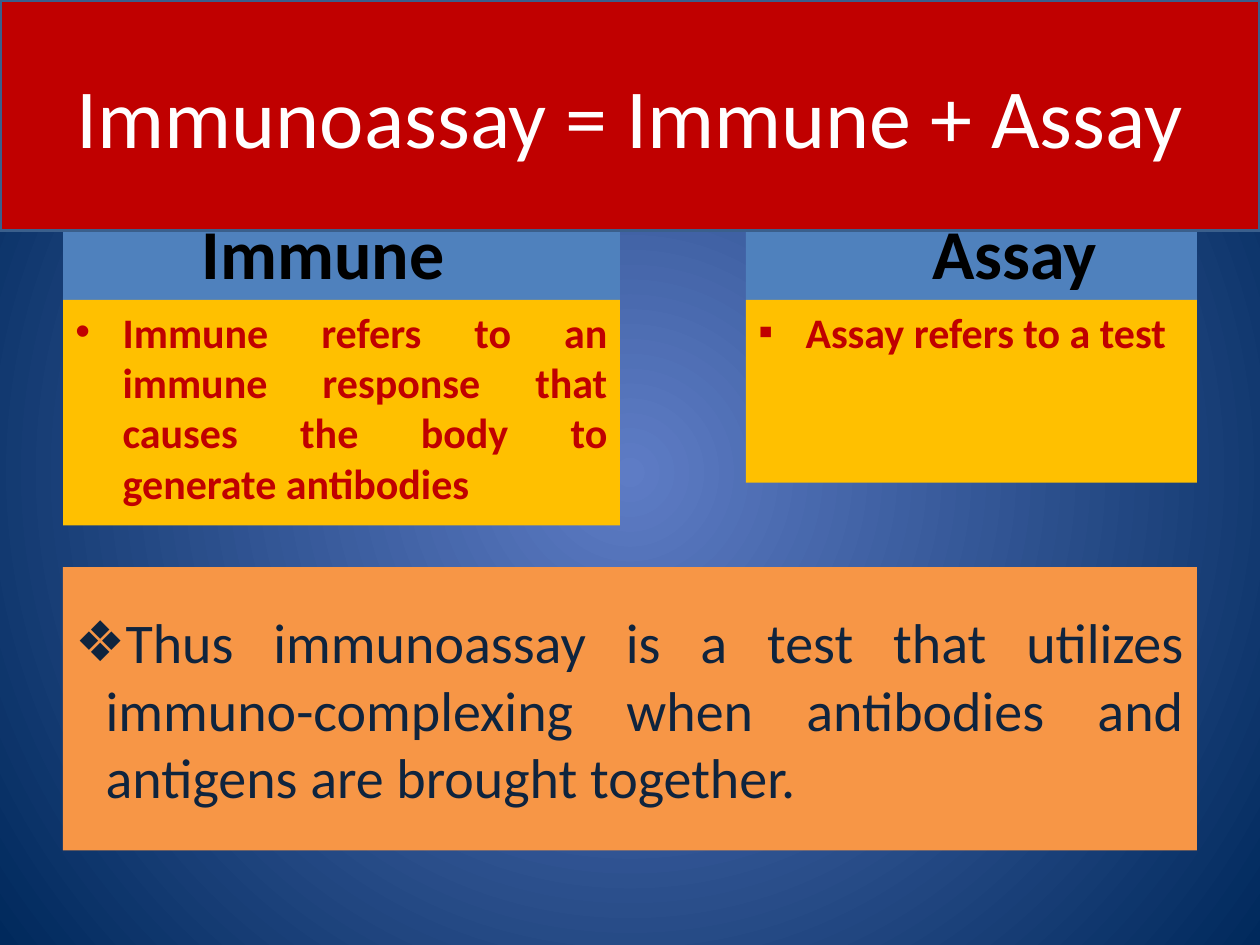
from lxml import etree
from pptx import Presentation
from pptx.dml.color import RGBColor as RGB
from pptx.enum.shapes import MSO_SHAPE as SHAPE
from pptx.enum.text import MSO_ANCHOR as ANCHOR, PP_ALIGN as ALIGN
from pptx.oxml.ns import qn
from pptx.util import Pt

COLORS = {
    "glow": "5E7CC5", "navy": "00295C", "red": "C00000", "edge": "3A5F8C",
    "blue": "4F81BD", "gold": "FFC000", "orange": "F79646",
    "ink": "0F243E", "black": "000000", "white": "FFFFFF",
}
FONT = "Calibri"
W, H = 720, 540
MARGIN = 36
HEAD_TOP, HEAD_H = 120.96, 50.4

TITLE = "Immunoassay = Immune + Assay"
SUMMARY = ("Thus immunoassay is a test that utilizes immuno-complexing "
           "when antibodies and antigens are brought together.")
COLUMNS = [
    dict(head="Immune", indent=72.3, left=MARGIN, width=318.24, height=128.88,
         text="Immune refers to an immune response that causes the body to generate antibodies",
         bullet="•", align=ALIGN.JUSTIFY),
    dict(head="Assay", indent=99.4, left=426.24, width=257.76, height=104.4,
         text="Assay refers to a test", bullet="▪", align=ALIGN.LEFT),
]


def rgb(name):
    return RGB.from_string(COLORS[name])


def add_box(s, text, at, *, fill, color, size, bold=False, align=ALIGN.LEFT,
            anchor=ANCHOR.MIDDLE, bullet=None, indent=0, line=None):
    sp = s.shapes.add_shape(SHAPE.RECTANGLE, *map(Pt, at))
    sp.shadow.inherit = False
    sp.fill.solid()
    sp.fill.fore_color.rgb = rgb(fill)
    if line:
        sp.line.color.rgb = rgb(line)
        sp.line.width = Pt(2)
    else:
        sp.line.fill.background()
    tf = sp.text_frame
    tf.word_wrap = True
    tf.vertical_anchor = anchor
    p = tf.paragraphs[0]
    p.alignment = align
    pPr = p._p.get_or_add_pPr()
    pPr.set("marL", str(Pt(indent)))
    if bullet:
        pPr.set("indent", str(-Pt(indent)))
        etree.SubElement(pPr, qn("a:buFont"), typeface="Arial")
        etree.SubElement(pPr, qn("a:buChar"), char=bullet)
    r = p.add_run()
    r.text = text
    r.font.name = FONT
    r.font.size = Pt(size)
    r.font.bold = bold
    r.font.color.rgb = rgb(color)


def set_background(s):
    fill = s.background.fill
    fill.gradient()
    for stop, name, pos in zip(fill.gradient_stops, ("glow", "navy"), (0, 1)):
        stop.color.rgb = rgb(name)
        stop.position = pos
    grad = s.element.find(".//" + qn("a:gradFill"))
    grad.remove(grad.find(qn("a:lin")))
    circle = etree.Element(qn("a:path"), path="circle")
    etree.SubElement(circle, qn("a:fillToRect"), dict.fromkeys("ltrb", "50000"))
    grad.find(qn("a:gsLst")).addnext(circle)


def main():
    prs = Presentation()
    prs.slide_width, prs.slide_height = Pt(W), Pt(H)
    s = prs.slides.add_slide(prs.slide_layouts[6])
    set_background(s)
    add_box(s, SUMMARY, (MARGIN, 324, W - 2 * MARGIN, 162), fill="orange",
            color="ink", size=32, align=ALIGN.JUSTIFY, bullet="❖", indent=17.3)
    for col in COLUMNS:
        left, width = col["left"], col["width"]
        add_box(s, col["head"], (left, HEAD_TOP, width, HEAD_H), fill="blue",
                color="black", size=40, bold=True, anchor=ANCHOR.BOTTOM,
                indent=col["indent"])
        add_box(s, col["text"], (left, HEAD_TOP + HEAD_H, width, col["height"]),
                fill="gold", color="red", size=24, bold=True, anchor=ANCHOR.TOP,
                align=col["align"], bullet=col["bullet"], indent=27)
    add_box(s, TITLE, (0, 0, W, 131.76), fill="red", color="white", size=48,
            align=ALIGN.CENTER, line="edge")
    prs.save("out.pptx")


if __name__ == "__main__":
    main()
